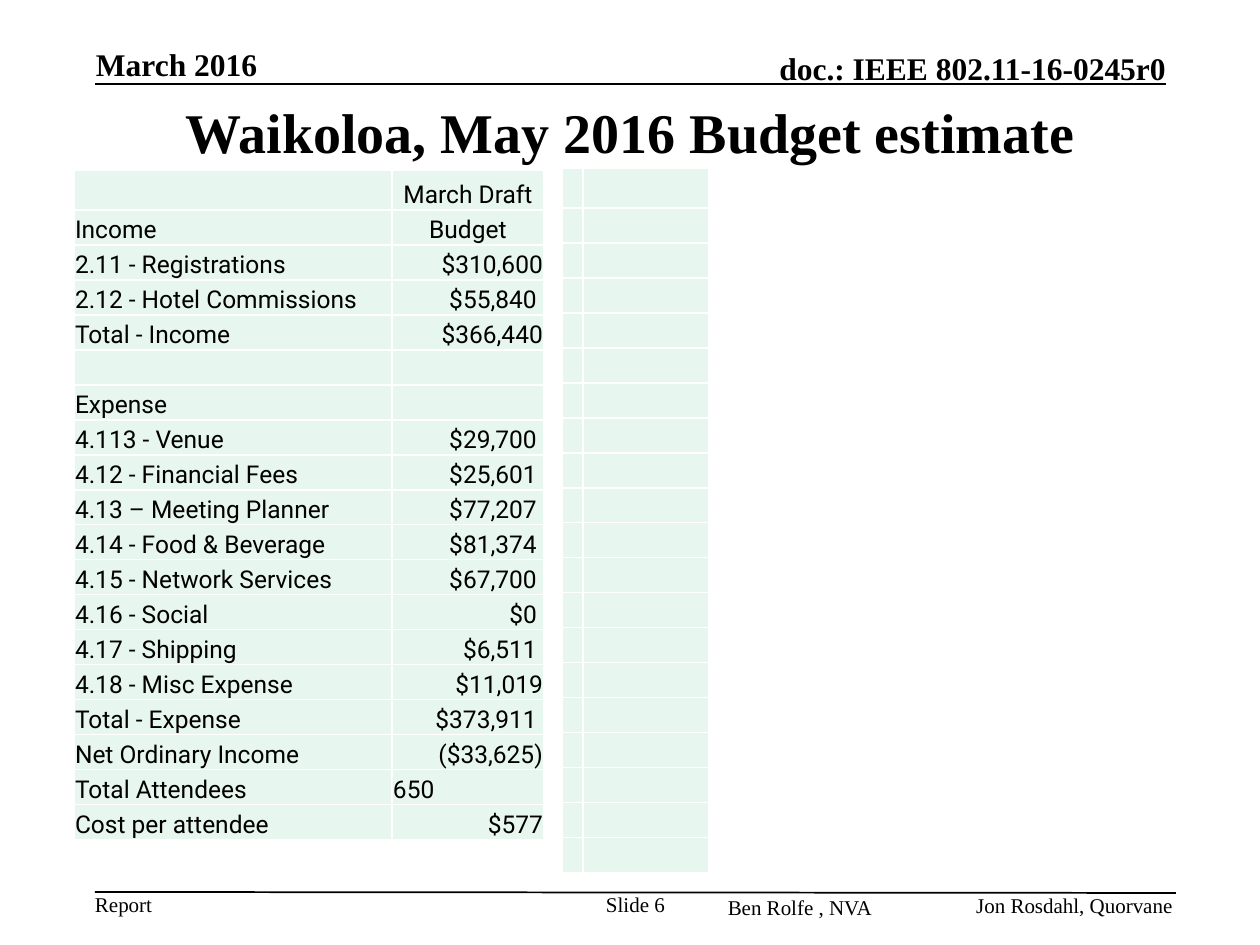
from dataclasses import dataclass

from lxml import etree
from pptx import Presentation
from pptx.dml.color import RGBColor
from pptx.enum.shapes import MSO_CONNECTOR
from pptx.enum.text import MSO_ANCHOR, PP_ALIGN
from pptx.oxml.ns import qn
from pptx.util import Emu, Pt

PX_PER_INCH = 126
SLIDE_W, SLIDE_H = 1260, 945
COLORS = {"ink": "000000", "cell": "E7F6EF", "grid": "FFFFFF"}
SERIF, SANS = "Times New Roman", "Roboto"
LEFT, CENTER, RIGHT = PP_ALIGN.LEFT, PP_ALIGN.CENTER, PP_ALIGN.RIGHT
TOP, MIDDLE, BOTTOM = MSO_ANCHOR.TOP, MSO_ANCHOR.MIDDLE, MSO_ANCHOR.BOTTOM
STRAIGHT = MSO_CONNECTOR.STRAIGHT
CELL_SIZE = 14
HEAD_ROW, BODY_ROW = 40, 35


@dataclass
class Label:
    text: str
    box: tuple[int, int, int, int]
    size: int
    bold: bool = False
    align: PP_ALIGN = LEFT
    anchor: MSO_ANCHOR = TOP
    wrap: bool = True


@dataclass
class BudgetRow:
    item: str = ""
    amount: str = ""
    align: PP_ALIGN = RIGHT


LABELS = [
    Label("March 2016", (96, 45, 258, 38), 18, True, LEFT, BOTTOM),
    Label("doc.: IEEE 802.11-16-0245r0", (494, 49, 672, 38), 18, True, RIGHT, BOTTOM),
    Label("Report", (95, 892, 58, 25), 12, wrap=False),
    Label("Slide 6", (599, 892, 73, 50), 12, align=CENTER),
    Label("Ben Rolfe , NVA", (714, 895, 158, 25), 12, align=RIGHT),
    Label("Jon Rosdahl, Quorvane ", (903, 892, 275, 33), 12, align=RIGHT),
]
RULES = [(95, 84, 1166, 84), (95, 892, 1176, 893)]
BUDGET = [
    BudgetRow("", "March Draft", CENTER),
    BudgetRow("Income", "Budget", CENTER),
    BudgetRow("2.11 - Registrations", "$310,600"),
    BudgetRow("2.12 - Hotel Commissions", "$55,840 "),
    BudgetRow("Total - Income", "$366,440"),
    BudgetRow(),
    BudgetRow("Expense"),
    BudgetRow("4.113 - Venue", "$29,700 "),
    BudgetRow("4.12 - Financial Fees", "$25,601 "),
    BudgetRow("4.13 – Meeting Planner", "$77,207 "),
    BudgetRow("4.14 - Food & Beverage", "$81,374 "),
    BudgetRow("4.15 - Network Services", "$67,700 "),
    BudgetRow("4.16 - Social", "$0 "),
    BudgetRow("4.17 - Shipping", "$6,511 "),
    BudgetRow("4.18 - Misc Expense", "$11,019"),
    BudgetRow("Total - Expense", "$373,911 "),
    BudgetRow("Net Ordinary Income", "($33,625)"),
    BudgetRow("Total Attendees", "650", LEFT),
    BudgetRow("Cost per attendee", "$577"),
]
BLANK_ROWS = [BudgetRow()] * 20


def px(length: int) -> Emu:
    return Emu(round(length * 914400 / PX_PER_INCH))


def color(name: str) -> RGBColor:
    return RGBColor.from_string(COLORS[name])


def add_run(paragraph, text: str, size: int, font: str, bold: bool = False) -> None:
    run = paragraph.add_run()
    run.text = text
    run.font.size = Pt(size)
    run.font.name = font
    run.font.bold = bold
    run.font.color.rgb = color("ink")


def add_label(slide, label: Label) -> None:
    frame = slide.shapes.add_textbox(*map(px, label.box)).text_frame
    frame.word_wrap = label.wrap
    frame.vertical_anchor = label.anchor
    frame.margin_left = frame.margin_right = 0
    frame.margin_top = frame.margin_bottom = 0
    paragraph = frame.paragraphs[0]
    paragraph.alignment = label.align
    add_run(paragraph, label.text, label.size, SERIF, label.bold)


def add_rule(slide, ends: tuple[int, int, int, int]) -> None:
    rule = slide.shapes.add_connector(STRAIGHT, *map(px, ends))
    rule.line.color.rgb = color("ink")
    rule.line.width = Pt(1)
    etree.SubElement(rule._element.spPr, qn("a:effectLst"))


def add_title(slide, text: str) -> None:
    title = slide.shapes.title
    title.left, title.top, title.width, title.height = map(px, (95, 95, 1071, 73))
    title.text_frame.vertical_anchor = MIDDLE
    title.text_frame.word_wrap = True
    paragraph = title.text_frame.paragraphs[0]
    paragraph.alignment = CENTER
    add_run(paragraph, text, 32, SERIF, True)


def fill_cell(cell, text: str, align: PP_ALIGN) -> None:
    # Borders come before the fill in the cell properties
    properties = cell._tc.get_or_add_tcPr()
    for side in ("lnL", "lnR", "lnT", "lnB"):
        border = etree.SubElement(properties, qn(f"a:{side}"), w=str(Pt(1)))
        paint = etree.SubElement(border, qn("a:solidFill"))
        etree.SubElement(paint, qn("a:srgbClr"), val=COLORS["grid"])
    cell.fill.solid()
    cell.fill.fore_color.rgb = color("cell")
    cell.margin_left = cell.margin_right = cell.margin_top = px(1)
    cell.margin_bottom = 0
    cell.vertical_anchor = BOTTOM
    paragraph = cell.text_frame.paragraphs[0]
    if text:
        paragraph.alignment = align
        add_run(paragraph, text, CELL_SIZE, SANS)
    else:
        # Keeps an empty cell from stretching its row
        etree.SubElement(paragraph._p, qn("a:endParaRPr"), sz=str(CELL_SIZE * 100))


def add_budget_table(slide, left: int, top: int, widths: tuple[int, int],
                     rows: list[BudgetRow]) -> None:
    heights = [HEAD_ROW] + [BODY_ROW] * (len(rows) - 1)
    table = slide.shapes.add_table(len(rows), len(widths), px(left), px(top),
                                   px(sum(widths)), px(sum(heights))).table
    for column, width in zip(table.columns, widths):
        column.width = px(width)
    for line, height, row in zip(table.rows, heights, rows):
        line.height = px(height)
        item, amount = line.cells
        fill_cell(item, row.item, LEFT)
        fill_cell(amount, row.amount, row.align)


def main() -> None:
    deck = Presentation()
    deck.slide_width, deck.slide_height = px(SLIDE_W), px(SLIDE_H)
    slide = deck.slides.add_slide(deck.slide_layouts[5])

    # Header and footer
    for ends in RULES:
        add_rule(slide, ends)
    for label in LABELS:
        add_label(slide, label)

    # Title and budget
    add_title(slide, "Waikoloa, May 2016 Budget estimate")
    add_budget_table(slide, 74, 170, (318, 152), BUDGET)
    add_budget_table(slide, 562, 168, (21, 126), BLANK_ROWS)

    deck.save("out.pptx")


if __name__ == "__main__":
    main()
